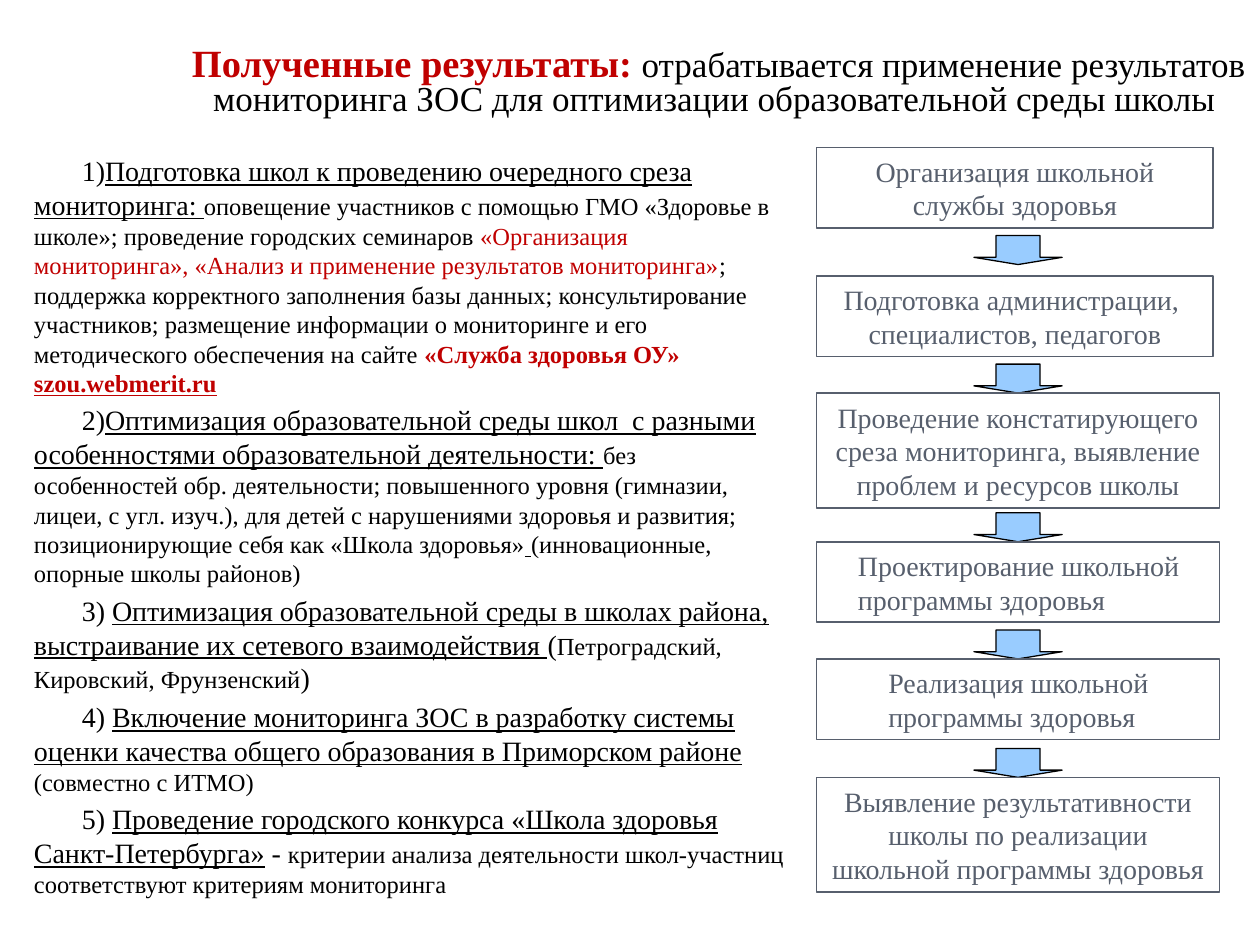
from lxml.etree import SubElement
from pptx import Presentation
from pptx.dml.color import RGBColor
from pptx.enum.shapes import MSO_SHAPE
from pptx.enum.text import MSO_ANCHOR, MSO_AUTO_SIZE, PP_ALIGN
from pptx.oxml.ns import qn
from pptx.util import Inches, Pt

FACE = "Times New Roman"
BLACK, RED, SLATE, WHITE, SKY = "000000", "C00000", "575F6D", "FFFFFF", "99CCFF"

BIG = {"size": Pt(16)}
LINE = {"size": Pt(16), "underline": True}
SMALL = {"size": Pt(14)}
ALERT = {"size": Pt(14), "color": RED}
STRONG = {**ALERT, "bold": True}

HEAD = [
    ("Полученные результаты: ", {"size": Pt(22), "color": RED, "bold": True}),
    ("отрабатывается применение результатов мониторинга ЗОС для оптимизации "
     "образовательной среды школы ", {"size": Pt(20)}),
]

ITEMS = [
    (1, [
        ("Подготовка школ к проведению очередного среза мониторинга: ", LINE),
        ("оповещение участников с помощью ГМО «Здоровье в школе»; "
         "проведение городских семинаров ", SMALL),
        ("«Организация мониторинга», «Анализ и применение результатов мониторинга»", ALERT),
        ("; поддержка корректного заполнения базы данных; консультирование участников; "
         "размещение информации о мониторинге и его методического обеспечения на сайте ", SMALL),
        ("«Служба здоровья ОУ» ", STRONG),
        ("szou.webmerit.ru", {**STRONG, "underline": True}),
    ]),
    (2, [
        ("Оптимизация образовательной среды школ  с разными особенностями "
         "образовательной деятельности: ", LINE),
        ("без особенностей обр. деятельности; повышенного уровня (гимназии, лицеи, "
         "с угл. изуч.), для детей с нарушениями здоровья и развития; "
         "позиционирующие себя как «Школа здоровья»", SMALL),
        (" ", {**SMALL, "underline": True}),
        ("(инновационные, опорные школы районов)", SMALL),
    ]),
    (None, [
        ("3) ", BIG),
        ("Оптимизация образовательной среды в школах района, "
         "выстраивание их сетевого взаимодействия ", LINE),
        ("(", BIG),
        ("Петроградский, Кировский, Фрунзенский", SMALL),
        (")", BIG),
    ]),
    (None, [
        ("4) ", BIG),
        ("Включение мониторинга ЗОС в разработку системы оценки качества "
         "общего образования в Приморском районе ", LINE),
        ("(совместно с ИТМО)", SMALL),
    ]),
    (None, [
        ("5) ", BIG),
        ("Проведение городского конкурса «Школа здоровья Санкт-Петербурга»", LINE),
        (" - ", BIG),
        ("критерии анализа деятельности школ-участниц соответствуют критериям мониторинга", SMALL),
    ]),
]

MID, LEFT = PP_ALIGN.CENTER, PP_ALIGN.LEFT
STEPS = [
    ("Организация школьной службы здоровья", 315, 2, MID, 10, 6, 9),
    ("Подготовка администрации, \nспециалистов, педагогов", 315, 2, MID, 10, 6, 0),
    ("Проведение констатирующего среза мониторинга, выявление проблем и ресурсов школы",
     320, 3, MID, 10, 4, 0),
    ("Проектирование школьной программы здоровья", 320, 2, LEFT, 33, 6, 0),
    ("Реализация школьной программы здоровья", 320, 2, LEFT, 57, 7, 0),
    ("Выявление результативности школы по реализации школьной программы здоровья",
     320, 3, MID, 10, 0, 0),
]


def cells(count):
    """Turn grid cells, a hundred to the inch, into a length."""
    return Inches(count / 100)


def paint(part, color):
    """Give a fill, line or font a hex colour."""
    if hasattr(part, "solid"):
        part.solid()
        part = part.fore_color
    else:
        part = part.color
    part.rgb = RGBColor.from_string(color)


def place(shape, box):
    """Move a shape to a box of grid cells."""
    for name, count in zip(("left", "top", "width", "height"), box):
        setattr(shape, name, cells(count))


def write(para, runs):
    """Add formatted runs to a paragraph."""
    for text, style in runs:
        run = para.add_run()
        run.text = text
        look = {"name": FACE, "bold": False, "underline": False, "color": BLACK, **style}
        paint(run.font, look.pop("color"))
        for name, value in look.items():
            setattr(run.font, name, value)


def title(shape, box):
    """Fill the heading of the slide."""
    place(shape, box)
    frame = shape.text_frame
    frame.auto_size = MSO_AUTO_SIZE.NONE
    frame.vertical_anchor = MSO_ANCHOR.MIDDLE
    para = frame.paragraphs[0]
    para.alignment = MID
    para.line_spacing = 0.8
    write(para, HEAD)


def body(shape, box):
    """Fill the list of results."""
    place(shape, box)
    frame = shape.text_frame
    frame.auto_size = MSO_AUTO_SIZE.NONE
    for row, (start, runs) in enumerate(ITEMS):
        para = frame.add_paragraph() if row else frame.paragraphs[0]
        if not row:
            para.space_before = Pt(0)
        props = para._p.get_or_add_pPr()
        props.set("marL", str(cells(1)))
        props.set("indent", str(cells(38)))
        if start:
            mark = SubElement(props, qn("a:buAutoNum"), type="arabicParenR")
            mark.set("startAt", str(start))
        else:
            SubElement(props, qn("a:buNone"))
        write(para, runs)


def block(slide, kind, box, fill, edge, weight):
    """Draw one filled and outlined shape."""
    shape = slide.shapes.add_shape(kind, *map(cells, box))
    shape.shadow.inherit = False
    paint(shape.fill, fill)
    paint(shape.line, edge)
    shape.line.width = Pt(weight)
    return shape


def step(slide, box, text, align, inset):
    """Draw one labelled step of the flow."""
    shape = block(slide, MSO_SHAPE.RECTANGLE, box, WHITE, SLATE, 1)
    frame = shape.text_frame
    frame.word_wrap = True
    frame.vertical_anchor = MSO_ANCHOR.MIDDLE
    frame.margin_left = cells(inset)
    for row, part in enumerate(text.split("\n")):
        para = frame.add_paragraph() if row else frame.paragraphs[0]
        para.alignment = align
        write(para, [(part, {**BIG, "color": SLATE})])


def flow(slide, box):
    """Stack the steps with arrows between them."""
    left, top, width, _ = box
    for text, wide, lines, align, inset, lead, tail in STEPS:
        high = 10 + 27 * lines
        step(slide, (left, top, wide, high), text, align, inset)
        top += high + lead
        if lead:
            spot = (left + width / 2 - 35, top, 70, 23)
            arrow = block(slide, MSO_SHAPE.DOWN_ARROW, spot, SKY, BLACK, 0.75)
            arrow.adjustments[1] = 0.25
        top += 23 + tail


def main():
    """Build the slide and save it."""
    deck = Presentation()
    deck.slide_width, deck.slide_height = cells(1000), cells(750)
    slide = deck.slides.add_slide(deck.slide_layouts[1])
    title(slide.shapes.title, (141, 16, 859, 100))
    body(slide.placeholders[1], (16, 117, 617, 609))
    flow(slide, (648, 117, 320, 591))
    deck.save("out.pptx")


if __name__ == "__main__":
    main()
